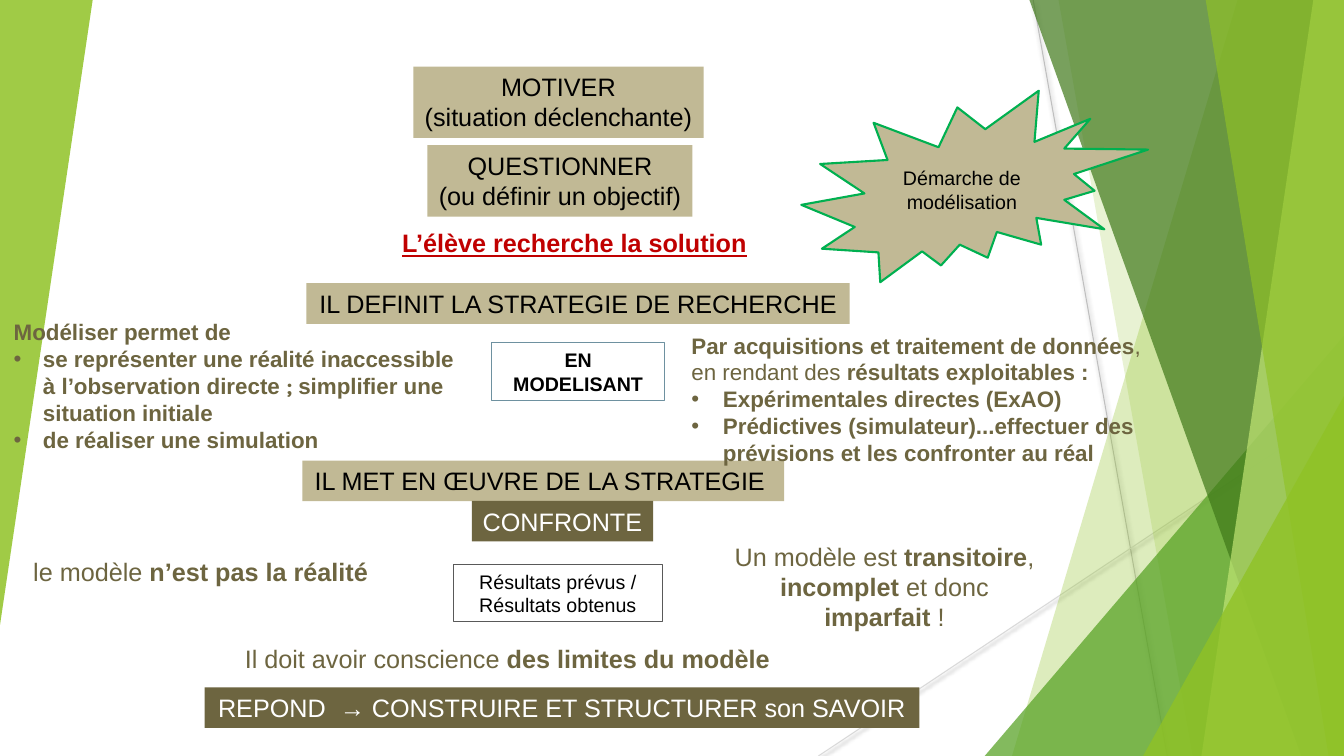
"""Build the slide that lays out the steps of a modelling approach."""
import dataclasses
import typing

import lxml.etree
import pptx
import pptx.dml.color
import pptx.enum.shapes
import pptx.enum.text
import pptx.oxml
import pptx.oxml.ns
import pptx.util

Pt = pptx.util.Pt
RGBColor = pptx.dml.color.RGBColor
MSO_SHAPE = pptx.enum.shapes.MSO_SHAPE
PP_ALIGN = pptx.enum.text.PP_ALIGN
MSO_ANCHOR = pptx.enum.text.MSO_ANCHOR
qn = pptx.oxml.ns.qn

WIDTH, HEIGHT, BAND_TOP = 960, 540, -0.7
BLACK = RGBColor(0x00, 0x00, 0x00)
WHITE = RGBColor(0xFF, 0xFF, 0xFF)
SAND = RGBColor(0xC1, 0xB9, 0x95)
OLIVE = RGBColor(0x6D, 0x65, 0x40)
RED = RGBColor(0xC0, 0x00, 0x00)
EMERALD = RGBColor(0x00, 0xB0, 0x50)
STEEL = RGBColor(0x6E, 0x91, 0xA0)
DARK_GREY = RGBColor(0x59, 0x59, 0x59)
MID_GREY = RGBColor(0xBF, 0xBF, 0xBF)
LIGHT_GREY = RGBColor(0xD9, 0xD9, 0xD9)
LIME = RGBColor(0x90, 0xC2, 0x26)
LEAF = RGBColor(0x54, 0xA0, 0x21)
FOREST = RGBColor(0x3F, 0x78, 0x19)
PALE_LIME = RGBColor(0xC0, 0xE4, 0x74)


@dataclasses.dataclass
class Ray:
    start: tuple[float, float]
    end: tuple[float, float]
    color: RGBColor


@dataclasses.dataclass
class Band:
    top_left: float
    bottom_left: float
    color: RGBColor
    opacity: int


@dataclasses.dataclass
class Triangle:
    frame: tuple[float, float, float, float]
    color: RGBColor
    opacity: int
    rotation: int = 0


class Run(typing.NamedTuple):
    text: str
    bold: bool = False
    font: str = "Arial"


@dataclasses.dataclass
class Paragraph:
    runs: list[Run]
    indent: float = 0


@dataclasses.dataclass
class Box:
    frame: tuple[float, float, float, float]
    paragraphs: list[Paragraph]
    color: RGBColor = BLACK
    size: int = 18
    fill: RGBColor | None = None
    outline: RGBColor | None = None
    outline_width: float = 0.75
    wrap: bool = False
    align: PP_ALIGN = PP_ALIGN.CENTER
    anchor: MSO_ANCHOR = MSO_ANCHOR.TOP
    preset: MSO_SHAPE = MSO_SHAPE.RECTANGLE
    underline: bool = False


def lines(*texts: str, bold: bool = False) -> list[Paragraph]:
    return [Paragraph([Run(text, bold)]) for text in texts]


RAYS = [Ray((738, 0), (833.8, 540), MID_GREY), Ray((960, 290.2), (584.6, 540), LIGHT_GREY)]

FACETS = [
    Band(884.2, 722.9, LIME, 30),
    Band(756, 851.8, LIME, 20),
    Triangle((703.4, 239.8, 256.6, 300.2), LEAF, 72),
    Band(735.1, 929.5, FOREST, 70),
    Band(938.2, 858.2, PALE_LIME, 70),
    Band(861.1, 949, LIME, 65),
    Triangle((816.5, 283, 143.5, 257), LIME, 80),
    Triangle((0, 0, 66.2, 446.4), LIME, 85, rotation=180),
]

BOXES = [
    Box((295.2, 47.5, 207.4, 51), lines("MOTIVER", "(situation déclenchante)"), fill=SAND),
    Box((305.3, 103.7, 189.4, 51), lines("QUESTIONNER", "(ou définir un objectif)"), fill=SAND),
    Box((218.9, 202.3, 388.1, 29), lines("IL DEFINIT LA STRATEGIE DE RECHERCHE"), fill=SAND),
    Box((351.4, 245, 123.1, 41), lines("EN MODELISANT", bold=True), size=14, outline=STEEL, wrap=True),
    Box((216, 329, 344.2, 29), lines("IL MET EN ŒUVRE DE LA STRATEGIE "), fill=SAND),
    Box((337, 357.8, 129.6, 29), lines("CONFRONTE"), WHITE, fill=OLIVE),
    Box((146.2, 491, 510.5, 29), lines("REPOND  → CONSTRUIRE ET STRUCTURER son SAVOIR"), WHITE, fill=OLIVE),
    Box((324, 403.2, 149, 41), lines("Résultats prévus /", "Résultats obtenus"), size=14,
        outline=DARK_GREY, wrap=True),
    Box((16.6, 393.8, 272.2, 29), [Paragraph([Run("le modèle "), Run("n’est pas la réalité", True)])],
        OLIVE, wrap=True, align=PP_ALIGN.LEFT),
    Box((167.8, 455.8, 393.1, 29),
        [Paragraph([Run("Il doit avoir conscience "), Run("des limites du modèle", True)])],
        OLIVE, align=PP_ALIGN.LEFT),
    Box((503.3, 383, 257, 72.7),
        [Paragraph([Run("Un modèle est "), Run("transitoire", True), Run(", "), Run("incomplet", True),
                    Run(" et donc\n"), Run("imparfait ", True), Run("!")])],
        OLIVE, wrap=True),
    Box((572.4, 64.8, 247.7, 136.8), lines("Démarche de modélisation"), size=14, fill=SAND,
        outline=EMERALD, outline_width=1.5, wrap=True, anchor=MSO_ANCHOR.MIDDLE, preset=MSO_SHAPE.EXPLOSION2),
]

TITLE = Box((280.1, 159.1, 262.8, 29), lines("L’élève recherche la solution", bold=True), RED,
            align=PP_ALIGN.LEFT, underline=True)

RESULTS = Box((486.7, 233.3, 340.6, 103), [
    Paragraph([Run("Par acquisitions et traitement de données", True), Run(", en rendant des "),
               Run("résultats exploitables :", True)]),
    Paragraph([Run("Expérimentales directes (ExAO)", True)], 22.5),
    Paragraph([Run("Prédictives (simulateur)...effectuer des prévisions et les confronter au réal", True)], 22.5),
], OLIVE, 16, wrap=True, align=PP_ALIGN.LEFT)

PURPOSES = Box((2.6, 223.9, 331.2, 103.7), [
    Paragraph([Run("Modéliser permet de", True)]),
    Paragraph([Run("se représenter une réalité inaccessible à l’observation directe", True),
               Run(" ; ", True, "Karla"), Run("simplifier une situation initiale", True)], 20.9),
    Paragraph([Run("de réaliser une simulation", True)], 20.9),
], OLIVE, 16, wrap=True, align=PP_ALIGN.LEFT)


def draw_ray(slide: typing.Any, ray: Ray) -> None:
    points = [Pt(value) for value in (*ray.start, *ray.end)]
    connector = slide.shapes.add_connector(pptx.enum.shapes.MSO_CONNECTOR.STRAIGHT, *points)
    connector.line.color.rgb = ray.color
    connector.line.width = Pt(0.75)
    effects = lxml.etree.SubElement(connector._element.spPr, qn("a:effectLst"))
    shadow = lxml.etree.SubElement(effects, qn("a:outerShdw"), blurRad=str(Pt(3.1)), dist=str(Pt(1.6)), dir="5400000")
    color = lxml.etree.SubElement(shadow, qn("a:srgbClr"), val=str(BLACK))
    lxml.etree.SubElement(color, qn("a:alpha"), val="38000")


def draw_facet(slide: typing.Any, facet: Band | Triangle) -> None:
    if isinstance(facet, Band):
        corners = [(WIDTH, BAND_TOP), (WIDTH, HEIGHT), (facet.bottom_left, HEIGHT)]
        builder = slide.shapes.build_freeform(Pt(facet.top_left), Pt(BAND_TOP))
        builder.add_line_segments([(Pt(x), Pt(y)) for x, y in corners], close=True)
        shape = builder.convert_to_shape()
    else:
        shape = slide.shapes.add_shape(MSO_SHAPE.ISOSCELES_TRIANGLE, *map(Pt, facet.frame))
        shape.adjustments[0] = 1
        shape.rotation = facet.rotation
    shape.shadow.inherit = False
    shape.line.fill.background()
    shape.fill.solid()
    shape.fill.fore_color.rgb = facet.color
    color = shape._element.spPr.find(qn("a:solidFill")).find(qn("a:srgbClr"))
    lxml.etree.SubElement(color, qn("a:alpha"), val=str(facet.opacity * 1000))


def add_run(paragraph: typing.Any, content: Run, box: Box) -> None:
    for index, piece in enumerate(content.text.split("\n")):
        if index:
            paragraph.add_line_break()
        if piece:
            run = paragraph.add_run()
            run.text = piece
            run.font.name = content.font
            run.font.size = Pt(box.size)
            run.font.bold = content.bold
            run.font.underline = box.underline
            run.font.color.rgb = box.color


def write_text(shape: typing.Any, box: Box) -> None:
    frame = shape.text_frame
    frame.word_wrap = box.wrap
    frame.auto_size = pptx.enum.text.MSO_AUTO_SIZE.NONE
    frame.vertical_anchor = box.anchor
    for index, content in enumerate(box.paragraphs):
        paragraph = frame.add_paragraph() if index else frame.paragraphs[0]
        paragraph.alignment = box.align
        paragraph.space_before = Pt(0)
        properties = paragraph._p.get_or_add_pPr()
        properties.set("marL", str(Pt(content.indent)))
        properties.set("indent", str(Pt(-content.indent)))
        if content.indent:
            lxml.etree.SubElement(properties, qn("a:buFont"), typeface="Arial")
            lxml.etree.SubElement(properties, qn("a:buChar"), char="•")
        else:
            lxml.etree.SubElement(properties, qn("a:buNone"))
        for run in content.runs:
            add_run(paragraph, run, box)


def draw_box(slide: typing.Any, box: Box) -> None:
    if box.fill or box.outline:
        shape = slide.shapes.add_shape(box.preset, *map(Pt, box.frame))
        shape.shadow.inherit = False
        shape.fill.background()
        shape.line.fill.background()
    else:
        shape = slide.shapes.add_textbox(*map(Pt, box.frame))
    if box.fill:
        shape.fill.solid()
        shape.fill.fore_color.rgb = box.fill
    if box.outline:
        shape.line.color.rgb = box.outline
        shape.line.width = Pt(box.outline_width)
    write_text(shape, box)


def fill_placeholder(slide: typing.Any, shape: typing.Any, box: Box) -> None:
    shape.left, shape.top, shape.width, shape.height = map(Pt, box.frame)
    write_text(shape, box)
    slide.shapes._spTree.append(shape._element)


def main() -> None:
    presentation = pptx.Presentation()
    presentation.slide_width, presentation.slide_height = Pt(WIDTH), Pt(HEIGHT)
    slide = presentation.slides.add_slide(presentation.slide_layouts.get_by_name("Two Content"))
    placeholders = list(slide.placeholders)
    for ray in RAYS:
        draw_ray(slide, ray)
    for facet in FACETS:
        draw_facet(slide, facet)
    for box in BOXES:
        draw_box(slide, box)
    for shape, box in zip(placeholders, (TITLE, RESULTS, PURPOSES)):
        fill_placeholder(slide, shape, box)
    presentation.save("out.pptx")


if __name__ == "__main__":
    main()
